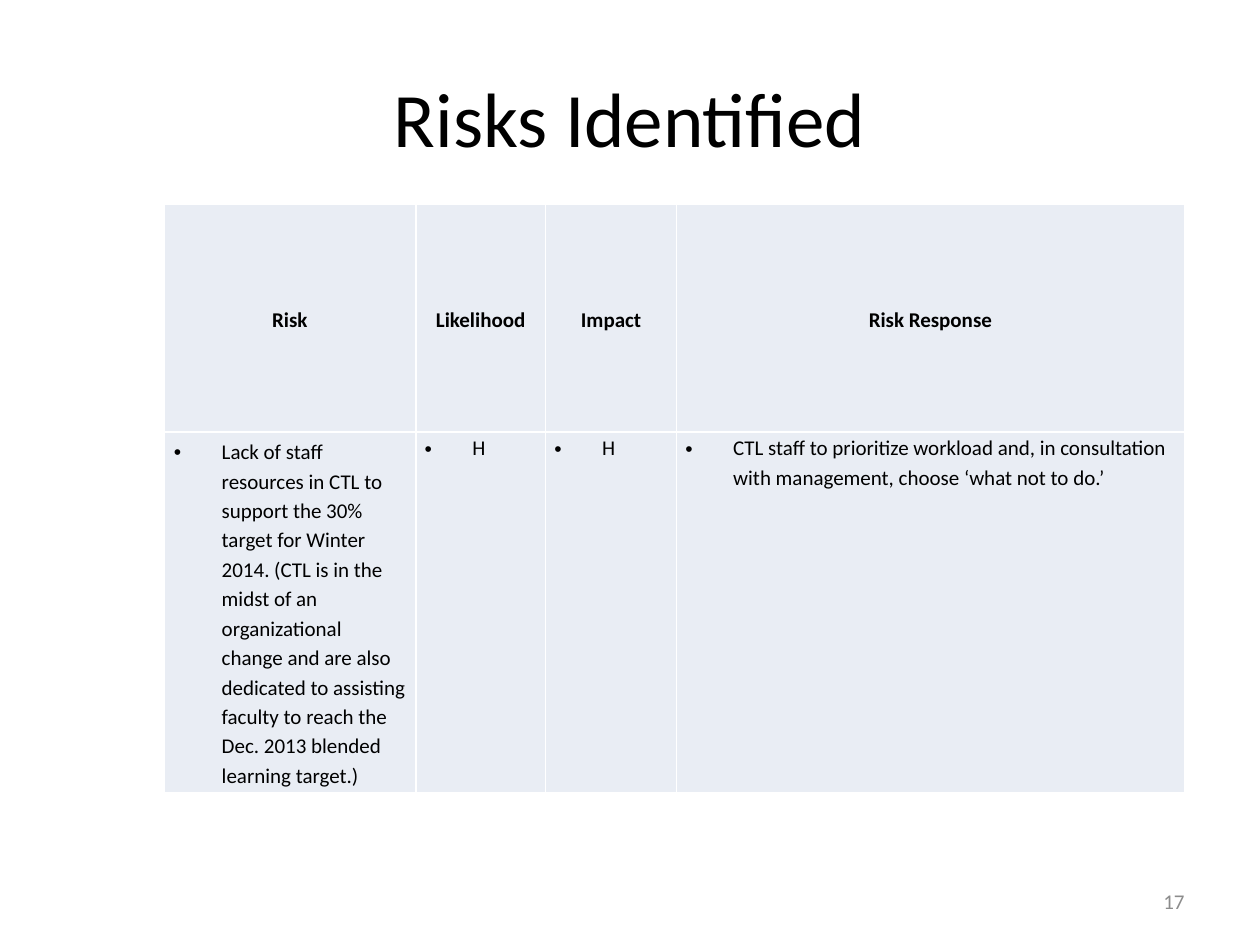
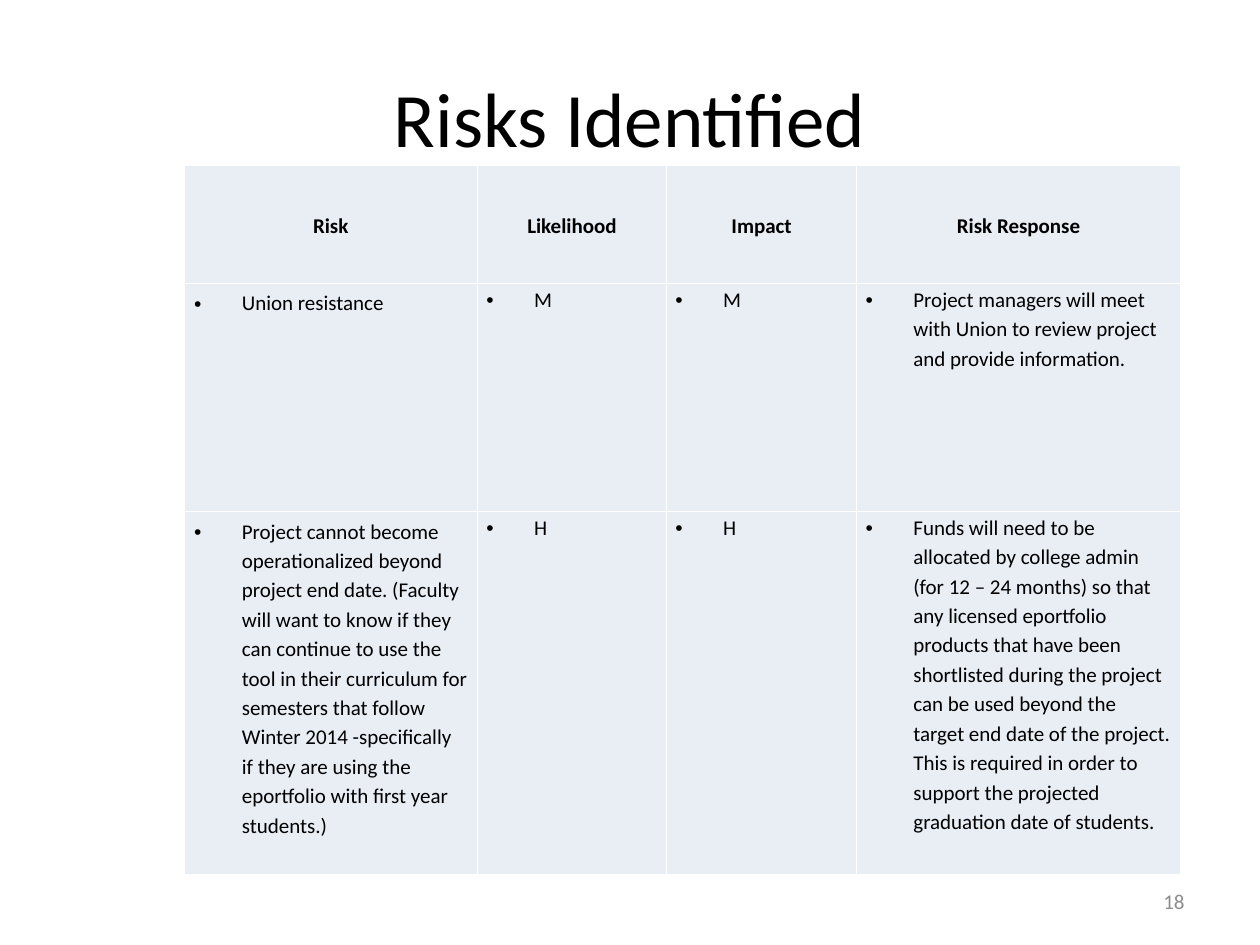
import pptx
import pptx.util
import pptx.dml.color
import pptx.enum.text
import pptx.oxml
from lxml import etree

Inches, Pt = pptx.util.Inches, pptx.util.Pt
ALIGN = pptx.enum.text.PP_ALIGN
MIDDLE = pptx.enum.text.MSO_ANCHOR.MIDDLE
TOP = pptx.enum.text.MSO_ANCHOR.TOP
NS = 'xmlns:a="http://schemas.openxmlformats.org/drawingml/2006/main"'
INK, GREY, CELL, RULE = "000000", "8C8C8C", "E9EDF4", "FFFFFF"
HEADS = ["Risk", "Likelihood", "Impact", "Risk Response"]

pages = [
    dict(
        number="17", left=1.3, top=1.62,
        widths=[2, 1.03, 1.04, 4.03], heights=[1.81, 2.86],
        risks=[
            ["Lack of staff resources in CTL to support the 30% target for "
             "Winter 2014. (CTL is in the midst of an organizational change "
             "and are also dedicated to assisting faculty to reach the "
             "Dec. 2013 blended learning target.)",
             "H", "H",
             "CTL staff to prioritize workload and, in consultation with "
             "management, choose ‘what not to do.’"],
        ]),
    dict(
        number="18", left=1.46, top=1.31,
        widths=[2.33, 1.5, 1.51, 2.57], heights=[0.94, 1.81, 2.88],
        risks=[
            ["Union resistance", "M", "M",
             "Project managers will meet with Union to review project and "
             "provide information."],
            ["Project cannot become operationalized beyond project end date. "
             "(Faculty will want to know if they can continue to use the tool "
             "in their curriculum for semesters that follow Winter 2014 "
             "-specifically if they are using the eportfolio with first year "
             "students.)",
             "H", "H",
             "Funds will need to be allocated by college admin (for 12 – 24 "
             "months) so that any licensed eportfolio products that have been "
             "shortlisted during the project can be used beyond the target "
             "end date of the project. This is required in order to support "
             "the projected graduation date of students."],
        ]),
]


def color(code):
    return pptx.dml.color.RGBColor.from_string(code)


def write(frame, text, size, ink, align, bold=False):
    """Fill a text frame with one styled paragraph and return it."""
    para = frame.paragraphs[0]
    para.text = text
    para.alignment = align
    para.font.name = "Calibri"
    para.font.size = Pt(size)
    para.font.bold = bold
    para.font.color.rgb = color(ink)
    return para


deck = pptx.Presentation()
deck.slide_width, deck.slide_height = Inches(10), Inches(7.5)

for page in pages:
    slide = deck.slides.add_slide(deck.slide_layouts[6])

    labels = [
        ("Risks Identified", (0.5, 0.3, 9, 1.25), 44, INK, ALIGN.CENTER),
        (page["number"], (7.17, 6.95, 2.33, 0.4), 12, GREY, ALIGN.RIGHT),
    ]
    for text, place, size, ink, align in labels:
        frame = slide.shapes.add_textbox(*map(Inches, place)).text_frame
        frame.word_wrap = True
        frame.vertical_anchor = MIDDLE
        write(frame, text, size, ink, align)

    rows = [HEADS] + page["risks"]
    widths, heights = page["widths"], page["heights"]
    table = slide.shapes.add_table(
        len(rows), len(HEADS), Inches(page["left"]), Inches(page["top"]),
        Inches(sum(widths)), Inches(sum(heights))).table
    for col, width in zip(table.columns, widths):
        col.width = Inches(width)
    for row, height in zip(table.rows, heights):
        row.height = Inches(height)

    for r, row in enumerate(rows):
        for c, text in enumerate(row):
            cell = table.cell(r, c)
            head = r == 0
            side, edge = (0.08, 0.03) if head or c == 0 else (0.07, 0)
            cell.margin_left = cell.margin_right = Inches(side)
            cell.margin_top = cell.margin_bottom = Inches(edge)
            cell.vertical_anchor = MIDDLE if head else TOP

            props = cell._tc.get_or_add_tcPr()
            for tag in ("lnL", "lnR", "lnT", "lnB"):
                props.append(pptx.oxml.parse_xml(
                    f'<a:{tag} {NS} w="{Pt(1)}"><a:solidFill>'
                    f'<a:srgbClr val="{RULE}"/></a:solidFill></a:{tag}>'))
            cell.fill.solid()
            cell.fill.fore_color.rgb = color(CELL)

            para = cell.text_frame.paragraphs[0]
            if not head:
                indent = para._p.get_or_add_pPr()
                indent.set("marL", str(Inches(0.38)))
                indent.set("indent", str(-Inches(0.38)))
                for mark in ('buFont {} typeface="Arial"', 'buChar {} char="•"'):
                    indent.append(etree.fromstring(f"<a:{mark.format(NS)}/>"))
                para.space_after = Pt(6)
            para.line_spacing = 1.15
            write(cell.text_frame, text, 12, INK,
                  ALIGN.CENTER if head else ALIGN.LEFT, head)

deck.save("out.pptx")
